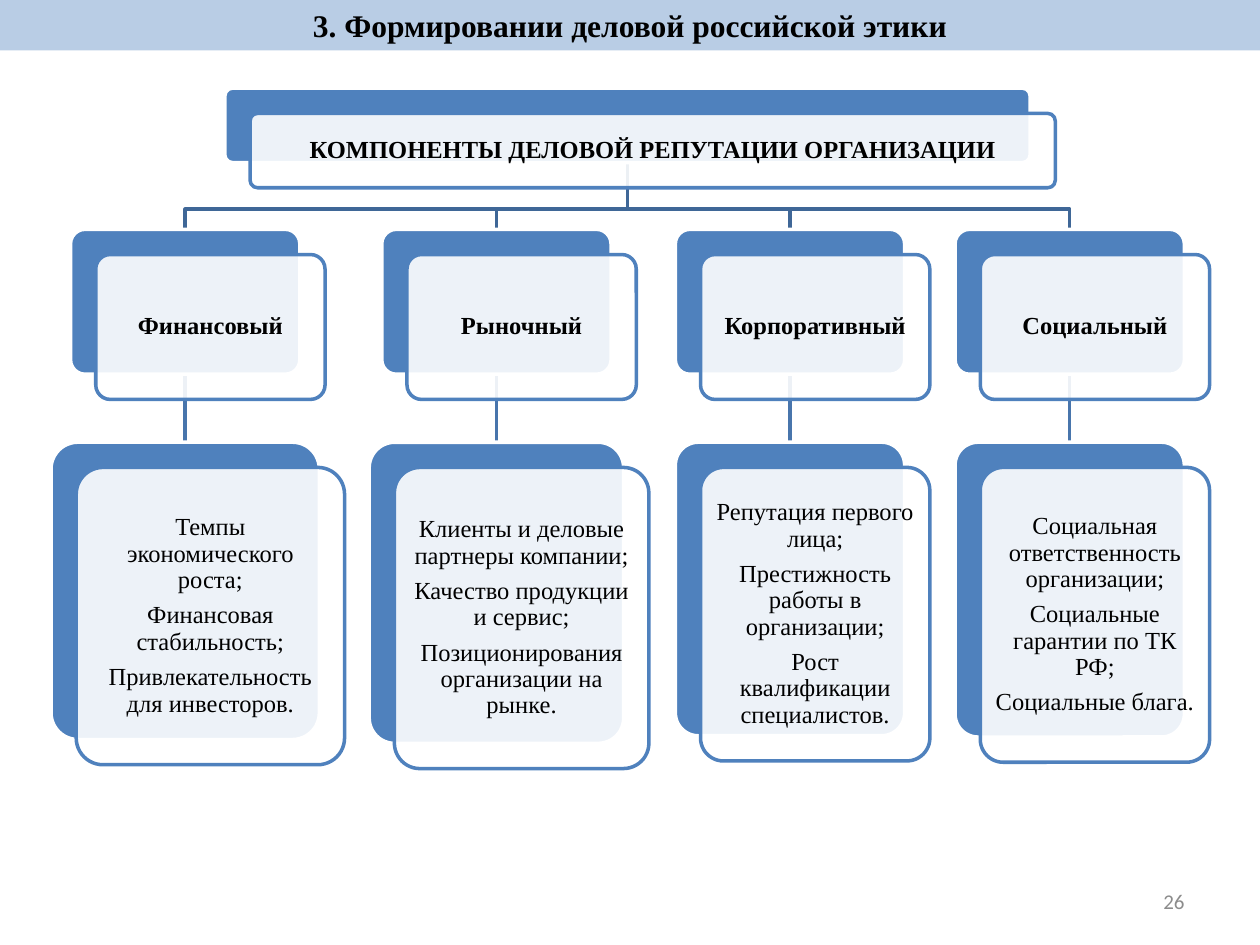
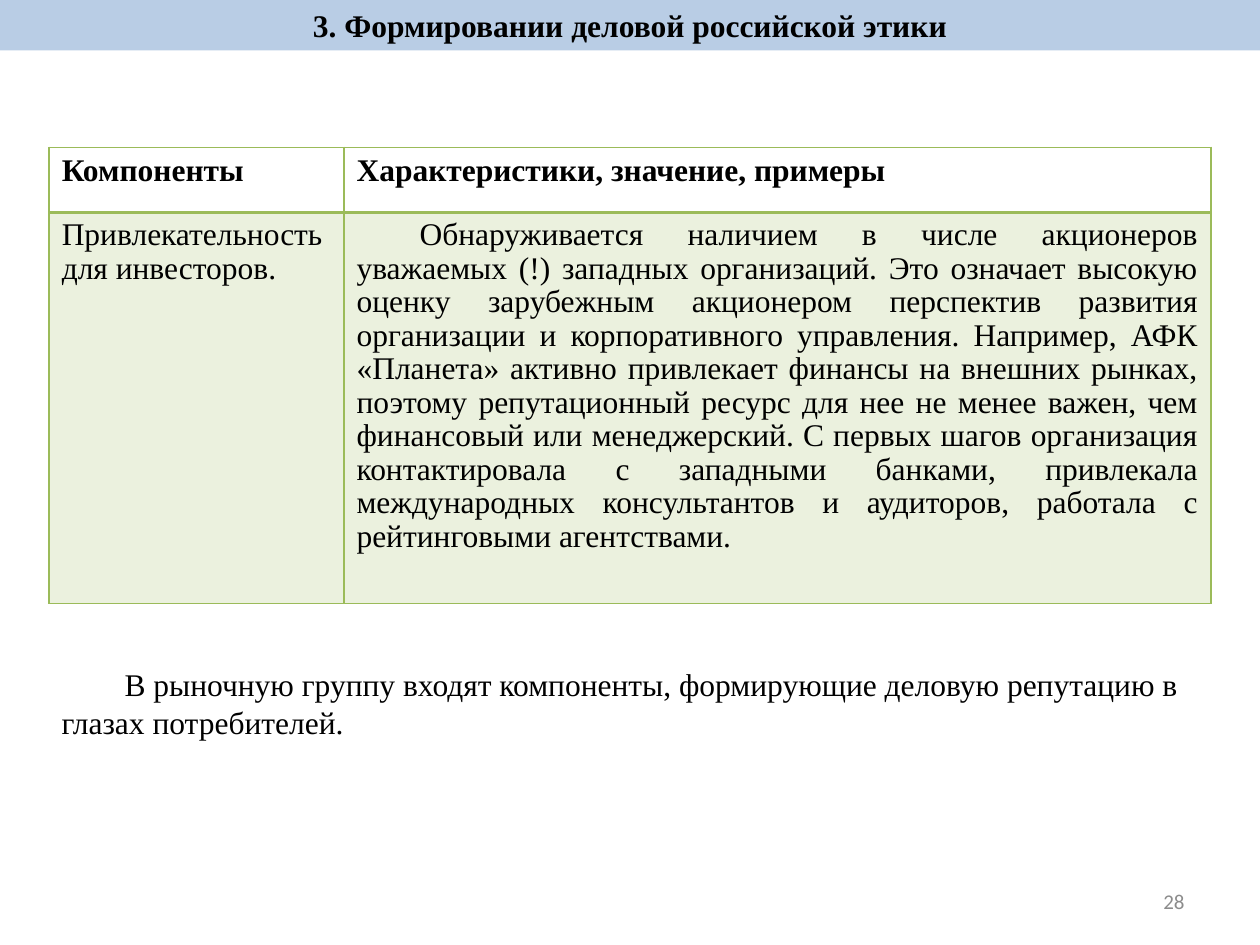
from dataclasses import dataclass

from lxml import etree
from pptx import Presentation
from pptx.dml.color import RGBColor
from pptx.enum.shapes import MSO_CONNECTOR, MSO_SHAPE
from pptx.enum.text import MSO_ANCHOR, PP_ALIGN
from pptx.oxml.ns import qn
from pptx.util import Inches, Pt

LEFT, CENTER, RIGHT, JUSTIFY = PP_ALIGN.LEFT, PP_ALIGN.CENTER, PP_ALIGN.RIGHT, PP_ALIGN.JUSTIFY
TOP, MIDDLE = MSO_ANCHOR.TOP, MSO_ANCHOR.MIDDLE
ROUNDED = MSO_SHAPE.ROUNDED_RECTANGLE
STRAIGHT = MSO_CONNECTOR.STRAIGHT


@dataclass(frozen=True)
class Theme:
    band: RGBColor = RGBColor(0xB9, 0xCD, 0xE5)
    card: RGBColor = RGBColor(0x4F, 0x81, 0xBD)
    upper_line: RGBColor = RGBColor(0x3F, 0x67, 0x97)
    lower_line: RGBColor = RGBColor(0x48, 0x75, 0xAC)
    table_fill: RGBColor = RGBColor(0xEB, 0xF1, 0xDE)
    table_line: str = "9BBB59"
    white: RGBColor = RGBColor(0xFF, 0xFF, 0xFF)
    black: RGBColor = RGBColor(0, 0, 0)
    gray: RGBColor = RGBColor(0x8C, 0x8C, 0x8C)
    font: str = "Times New Roman"
    number_font: str = "Calibri"
    large: int = Pt(18)
    medium: int = Pt(14)
    small: int = Pt(12)
    line: int = Pt(2)


theme = Theme()


def write_text(frame, lines, size, bold=False, color=theme.black, font=theme.font, indent=0, **paragraph_format):
    frame.word_wrap = True
    for index, line in enumerate(lines):
        paragraph = frame.paragraphs[0] if index == 0 else frame.add_paragraph()
        paragraph.text = line
        for name, value in paragraph_format.items():
            setattr(paragraph, name, value)
        for name, value in {"name": font, "size": size, "bold": bold}.items():
            setattr(paragraph.font, name, value)
        paragraph.font.color.rgb = color
        if indent:
            properties = paragraph._p.get_or_add_pPr()
            properties.set("marL", "0")
            properties.set("indent", str(indent))


def add_card(slide, left, top, width, height, lines, bold):
    layers = [(0, theme.card, theme.white), (0.2, theme.white, theme.card)]
    for offset, fill_color, line_color in layers:
        shape = slide.shapes.add_shape(
            ROUNDED, Inches(left + offset), Inches(top + offset), Inches(width), Inches(height))
        shape.adjustments[0] = 0.1
        shape.shadow.inherit = False
        shape.fill.solid()
        shape.fill.fore_color.rgb = fill_color
        shape.line.color.rgb = line_color
        shape.line.width = theme.line
    color = shape._element.spPr.find(qn("a:solidFill")).find(qn("a:srgbClr"))
    etree.SubElement(color, qn("a:alpha"), val="90000")
    frame = shape.text_frame
    for side in ("left", "right", "top", "bottom"):
        setattr(frame, f"margin_{side}", Inches(0.06))
    frame.vertical_anchor = MIDDLE
    write_text(frame, lines, theme.medium, bold, alignment=CENTER, line_spacing=0.9, space_after=Pt(4.9))


presentation = Presentation()
presentation.slide_width = Inches(10)
presentation.slide_height = Inches(7.5)

slides = []
for number in ("26", "28"):
    slide = presentation.slides.add_slide(presentation.slide_layouts[5])
    title = slide.shapes.title
    band_place = {"left": 0, "top": 0, "width": Inches(10), "height": Inches(0.4)}
    for name, value in band_place.items():
        setattr(title, name, value)
    title.fill.solid()
    title.fill.fore_color.rgb = theme.band
    title.text_frame.vertical_anchor = MIDDLE
    write_text(title.text_frame, ["3. Формировании деловой российской этики"], theme.large, True, alignment=CENTER)
    number_box = slide.shapes.add_textbox(Inches(7.17), Inches(6.95), Inches(2.33), Inches(0.4))
    number_box.text_frame.vertical_anchor = MIDDLE
    write_text(number_box.text_frame, [number], theme.small, color=theme.gray,
               font=theme.number_font, alignment=RIGHT)
    slides.append(slide)
components_slide, table_slide = slides

components = [
    ("Финансовый", 1.47, 2.13, 2.36, [
        "Темпы экономического роста;",
        "Финансовая стабильность;",
        "Привлекательность для инвесторов."]),
    ("Рыночный", 3.94, 2.02, 2.39, [
        "Клиенты и деловые партнеры компании;",
        "Качество продукции и сервис;",
        "Позиционирования организации на рынке."]),
    ("Корпоративный", 6.27, 1.82, 2.33, [
        "Репутация первого лица;",
        "Престижность работы в организации;",
        "Рост квалификации специалистов."]),
    ("Социальный", 8.49, 1.82, 2.34, [
        "Социальная ответственность организации;",
        "Социальные гарантии по ТК РФ;",
        "Социальные блага."]),
]
root_center, root_top, root_width, root_height = 4.98, 0.7, 6.39, 0.59
group_top, group_width, group_height = 1.82, 1.82, 1.15
detail_top, branch_level = 3.51, 1.66
root_bottom = root_top + root_height

for name, center, width, height, details in components:
    builder = components_slide.shapes.build_freeform(Inches(root_center), Inches(root_bottom))
    builder.add_line_segments([
        (Inches(root_center), Inches(branch_level)),
        (Inches(center), Inches(branch_level)),
        (Inches(center), Inches(group_top))], close=False)
    branch = builder.convert_to_shape()
    branch.shadow.inherit = False
    branch.fill.background()
    stem = components_slide.shapes.add_connector(
        STRAIGHT, Inches(center), Inches(group_top + group_height), Inches(center), Inches(detail_top))
    etree.SubElement(stem._element.spPr, qn("a:effectLst"))
    for line, color in ((branch.line, theme.upper_line), (stem.line, theme.lower_line)):
        line.color.rgb = color
        line.width = theme.line

add_card(components_slide, root_center - root_width / 2, root_top, root_width, root_height,
         ["КОМПОНЕНТЫ ДЕЛОВОЙ РЕПУТАЦИИ ОРГАНИЗАЦИИ"], True)
for name, center, width, height, details in components:
    add_card(components_slide, center - group_width / 2, group_top, group_width, group_height, [name], True)
    add_card(components_slide, center - width / 2, detail_top, width, height, details, False)

rows = [
    ("Компоненты", "Характеристики, значение, примеры"),
    ("Привлекательность для инвесторов.",
     "Обнаруживается наличием в числе акционеров уважаемых (!) западных организаций. "
     "Это означает высокую оценку зарубежным акционером перспектив развития организации "
     "и корпоративного управления. Например, АФК «Планета» активно привлекает финансы на "
     "внешних рынках, поэтому репутационный ресурс для нее не менее важен, чем финансовый "
     "или менеджерский. С первых шагов организация контактировала с западными банками, "
     "привлекала международных консультантов и аудиторов, работала с рейтинговыми агентствами."),
]
table = table_slide.shapes.add_table(2, 2, Inches(0.39), Inches(1.17), Inches(9.22), Inches(3.62)).table
table.horz_banding = False
for column, width in zip(table.columns, (2.34, 6.88)):
    column.width = Inches(width)
for row, height in zip(table.rows, (0.52, 3.1)):
    row.height = Inches(height)

for row_index, texts in enumerate(rows):
    is_header = row_index == 0
    for column_index, text in enumerate(texts):
        cell = table.cell(row_index, column_index)
        cell.vertical_anchor = TOP
        cell.fill.solid()
        cell.fill.fore_color.rgb = theme.white if is_header else theme.table_fill
        is_description = not is_header and column_index == 1
        write_text(cell.text_frame, [text], theme.large, is_header,
                   indent=Inches(0.5) if is_description else 0,
                   alignment=JUSTIFY if is_description else LEFT,
                   line_spacing=1.0 if is_header else 0.96)
        border_widths = {"lnL": 1, "lnR": 1, "lnT": 1 if is_header else 2, "lnB": 2 if is_header else 1}
        for position, (tag, width) in enumerate(border_widths.items()):
            border = etree.Element(qn(f"a:{tag}"), w=str(Pt(width)))
            border_fill = etree.SubElement(border, qn("a:solidFill"))
            etree.SubElement(border_fill, qn("a:srgbClr"), val=theme.table_line)
            cell._tc.tcPr.insert(position, border)

note = table_slide.shapes.add_textbox(Inches(0.39), Inches(5.23), Inches(9.38), Inches(0.71))
write_text(note.text_frame,
           ["В рыночную группу входят компоненты, формирующие деловую репутацию в глазах потребителей."],
           theme.large, indent=Inches(0.5), alignment=LEFT)

presentation.save("out.pptx")
